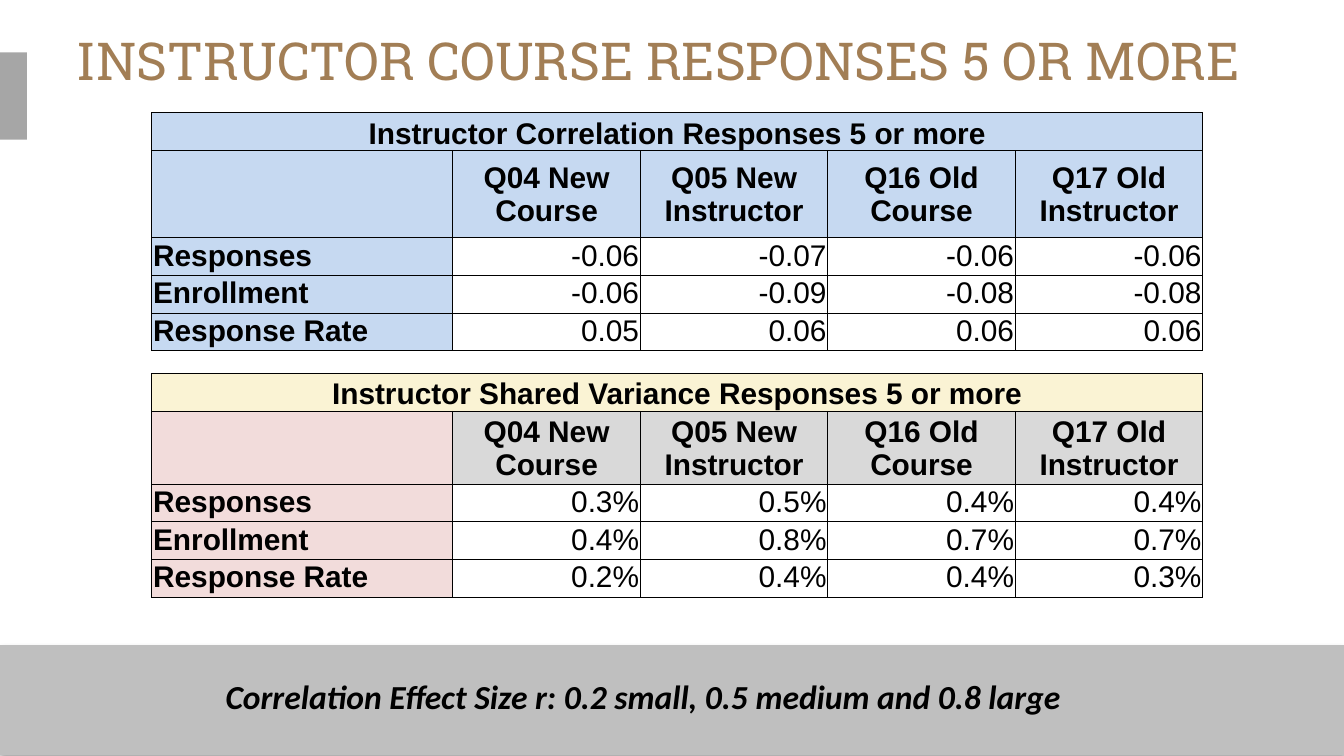
from dataclasses import dataclass

from lxml.etree import SubElement
from pptx import Presentation
from pptx.dml.color import RGBColor
from pptx.enum.shapes import MSO_SHAPE
from pptx.enum.text import MSO_ANCHOR, MSO_AUTO_SIZE, PP_ALIGN
from pptx.oxml import parse_xml
from pptx.oxml.ns import nsdecls, qn
from pptx.util import Inches, Pt


@dataclass(frozen=True)
class Theme:
    title_font: str = "Roboto Slab"
    table_font: str = "Arial"
    caption_font: str = "Calibri"
    title_size: int = 28
    table_size: int = 16
    caption_size: int = 18
    title_color: str = "A27E55"
    text: str = "000000"
    white: str = "FFFFFF"
    band: str = "BFBFBF"
    tab: str = "A6A6A6"
    blue: str = "C6D9F1"
    cream: str = "FAF3D4"
    pink: str = "F2DCDB"
    gray: str = "D9D9D9"


THEME = Theme()
HEADERS = ["Q04 New Course", "Q05 New Instructor", "Q16 Old Course", "Q17 Old Instructor"]
ROW_LABELS = ["Responses", "Enrollment", "Response Rate"]
CORRELATIONS = [
    ["-0.06", "-0.07", "-0.06", "-0.06"],
    ["-0.06", "-0.09", "-0.08", "-0.08"],
    ["0.05", "0.06", "0.06", "0.06"],
]
VARIANCES = [
    ["0.3%", "0.5%", "0.4%", "0.4%"],
    ["0.4%", "0.8%", "0.7%", "0.7%"],
    ["0.2%", "0.4%", "0.4%", "0.3%"],
]
LABEL_WIDTH = 2.24
ROW_HEIGHT = 0.28


def format_text(paragraph, font_name, size, color, bold=False, italic=False):
    for run in paragraph.runs:
        font = run.font
        font.name, font.size = font_name, Pt(size)
        font.bold, font.italic = bold, italic
        font.color.rgb = RGBColor.from_string(color)


def add_block(slide, box, color):
    shape = slide.shapes.add_shape(MSO_SHAPE.RECTANGLE, *map(Inches, box))
    shape.shadow.inherit = False
    shape.fill.solid()
    shape.fill.fore_color.rgb = RGBColor.from_string(color)
    shape.line.fill.background()
    return shape


def add_shadow(shape):
    effects = shape._element.spPr.find(qn("a:effectLst"))
    shadow = SubElement(effects, qn("a:outerShdw"), blurRad=str(Pt(3.1)),
                        dist=str(Pt(1.8)), dir="5400000", rotWithShape="0")
    color = SubElement(shadow, qn("a:srgbClr"), val=THEME.text)
    SubElement(color, qn("a:alpha"), val="35000")


def add_title(slide, box, text):
    title = slide.shapes.title
    title.left, title.top, title.width, title.height = map(Inches, box)
    frame = title.text_frame
    frame.text = text
    frame.margin_left = frame.margin_right = frame.margin_top = frame.margin_bottom = 0
    frame.vertical_anchor = MSO_ANCHOR.TOP
    frame.auto_size = MSO_AUTO_SIZE.NONE
    frame.paragraphs[0].alignment = PP_ALIGN.LEFT
    format_text(frame.paragraphs[0], THEME.title_font, THEME.title_size, THEME.title_color)


def add_footer(slide, box, text):
    left, top, width, height = box
    add_shadow(add_block(slide, box, THEME.band))
    caption = slide.shapes.add_textbox(
        Inches(left + 1.58), Inches(top + 0.18), Inches(6.45), Inches(0.4))
    frame = caption.text_frame
    frame.text = text
    frame.word_wrap = False
    frame.auto_size = MSO_AUTO_SIZE.SHAPE_TO_FIT_TEXT
    format_text(frame.paragraphs[0], THEME.caption_font, THEME.caption_size,
                THEME.text, bold=True, italic=True)


def style_cell(cell, text, fill, alignment, anchor, bold):
    cell.margin_left = cell.margin_right = cell.margin_top = Inches(0.01)
    cell.margin_bottom = 0
    cell.vertical_anchor = anchor
    cell.fill.solid()
    cell.fill.fore_color.rgb = RGBColor.from_string(fill)
    # Borders come before the fill in the cell properties
    properties = cell._tc.get_or_add_tcPr()
    for index, side in enumerate(["lnL", "lnR", "lnT", "lnB"]):
        properties.insert(index, parse_xml(
            f'<a:{side} {nsdecls("a")} w="{Pt(0.5)}"><a:solidFill>'
            f'<a:srgbClr val="{THEME.text}"/></a:solidFill></a:{side}>'))
    if text:
        cell.text_frame.text = text
        paragraph = cell.text_frame.paragraphs[0]
        paragraph.alignment = alignment
        format_text(paragraph, THEME.table_font, THEME.table_size, THEME.text, bold)


def add_statistics_table(slide, box, heading, values, heading_fill, header_fill, label_fill):
    left, top, width, height = box
    rows = [[heading] + [""] * len(HEADERS), [""] + HEADERS]
    rows += [[label] + numbers for label, numbers in zip(ROW_LABELS, values)]
    table = slide.shapes.add_table(len(rows), len(rows[0]), *map(Inches, box)).table
    table.first_row = table.horz_banding = False

    # Equal value columns, and a taller header row
    for index, column in enumerate(table.columns):
        column.width = Inches(LABEL_WIDTH if index == 0 else (width - LABEL_WIDTH) / len(HEADERS))
    for index, row in enumerate(table.rows):
        row.height = Inches(height - ROW_HEIGHT * (len(rows) - 1) if index == 1 else ROW_HEIGHT)

    table.cell(0, 0).merge(table.cell(0, len(HEADERS)))
    for row_index, row in enumerate(rows):
        for column_index, text in enumerate(row):
            if row_index == 0:
                look = heading_fill, PP_ALIGN.CENTER, MSO_ANCHOR.BOTTOM, True
            elif column_index == 0:
                look = label_fill, PP_ALIGN.LEFT, MSO_ANCHOR.TOP, True
            elif row_index == 1:
                look = header_fill, PP_ALIGN.CENTER, MSO_ANCHOR.MIDDLE, True
            else:
                look = THEME.white, PP_ALIGN.RIGHT, MSO_ANCHOR.TOP, False
            style_cell(table.cell(row_index, column_index), text, *look)


def main():
    presentation = Presentation()
    # Widescreen, 16:9
    presentation.slide_width = Inches(10)
    presentation.slide_height = Inches(10 * 9 / 16)
    slide = presentation.slides.add_slide(presentation.slide_layouts[5])

    # Frame of the slide
    add_footer(slide, (0, 4.8, 10, 0.82),
               "Correlation Effect Size r: 0.2 small, 0.5 medium and 0.8 large")
    add_block(slide, (-0.03, 0.39, 0.23, 0.65), THEME.tab)
    add_title(slide, (0.57, 0.21, 9.09, 0.63), "INSTRUCTOR COURSE RESPONSES 5 OR MORE")

    # Tables
    add_statistics_table(slide, (1.13, 0.84, 7.82, 1.77),
                         "Instructor Correlation Responses 5 or more", CORRELATIONS,
                         THEME.blue, THEME.blue, THEME.blue)
    add_statistics_table(slide, (1.13, 2.78, 7.82, 1.65),
                         "Instructor Shared Variance Responses 5 or more", VARIANCES,
                         THEME.cream, THEME.gray, THEME.pink)
    presentation.save("out.pptx")


if __name__ == "__main__":
    main()
